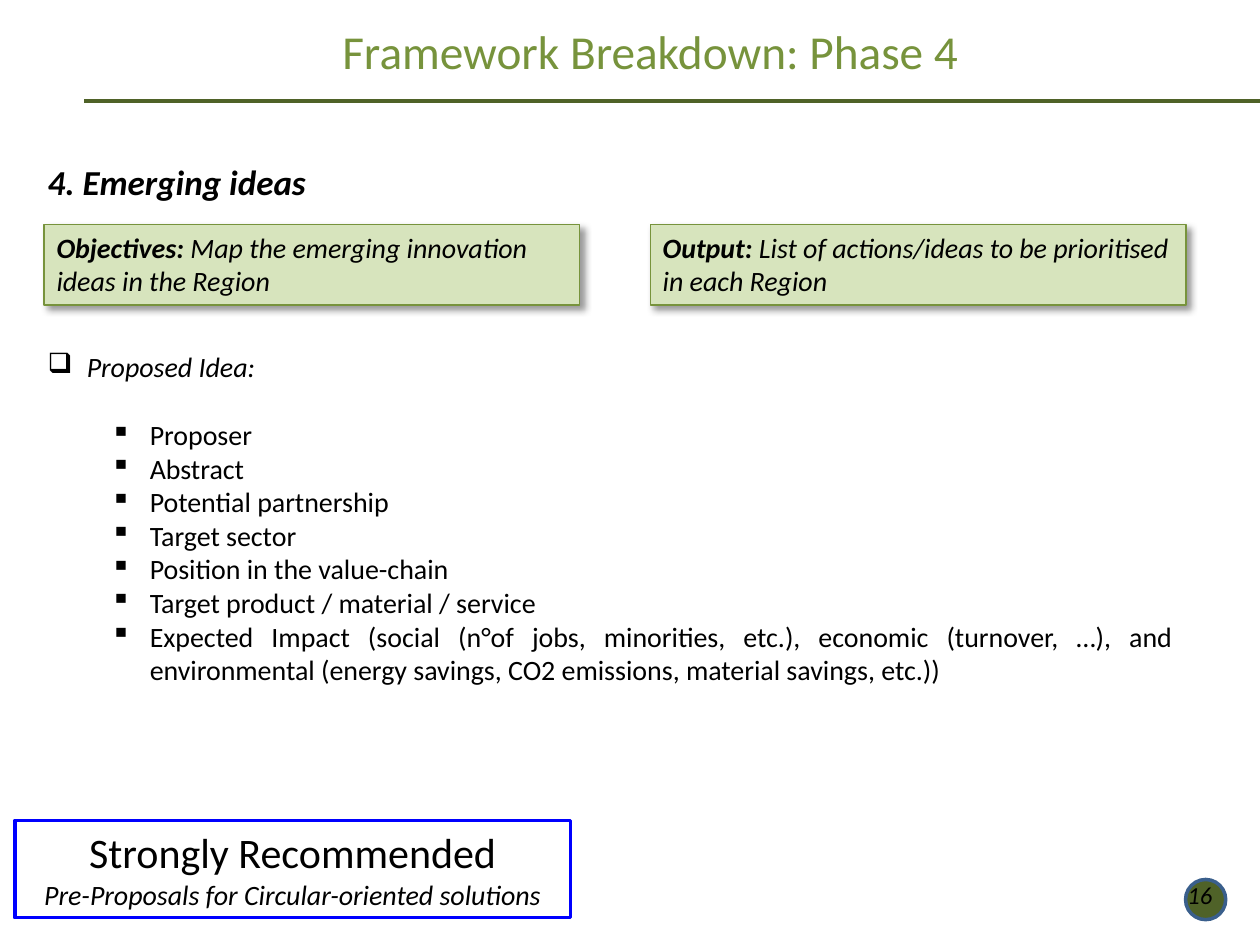
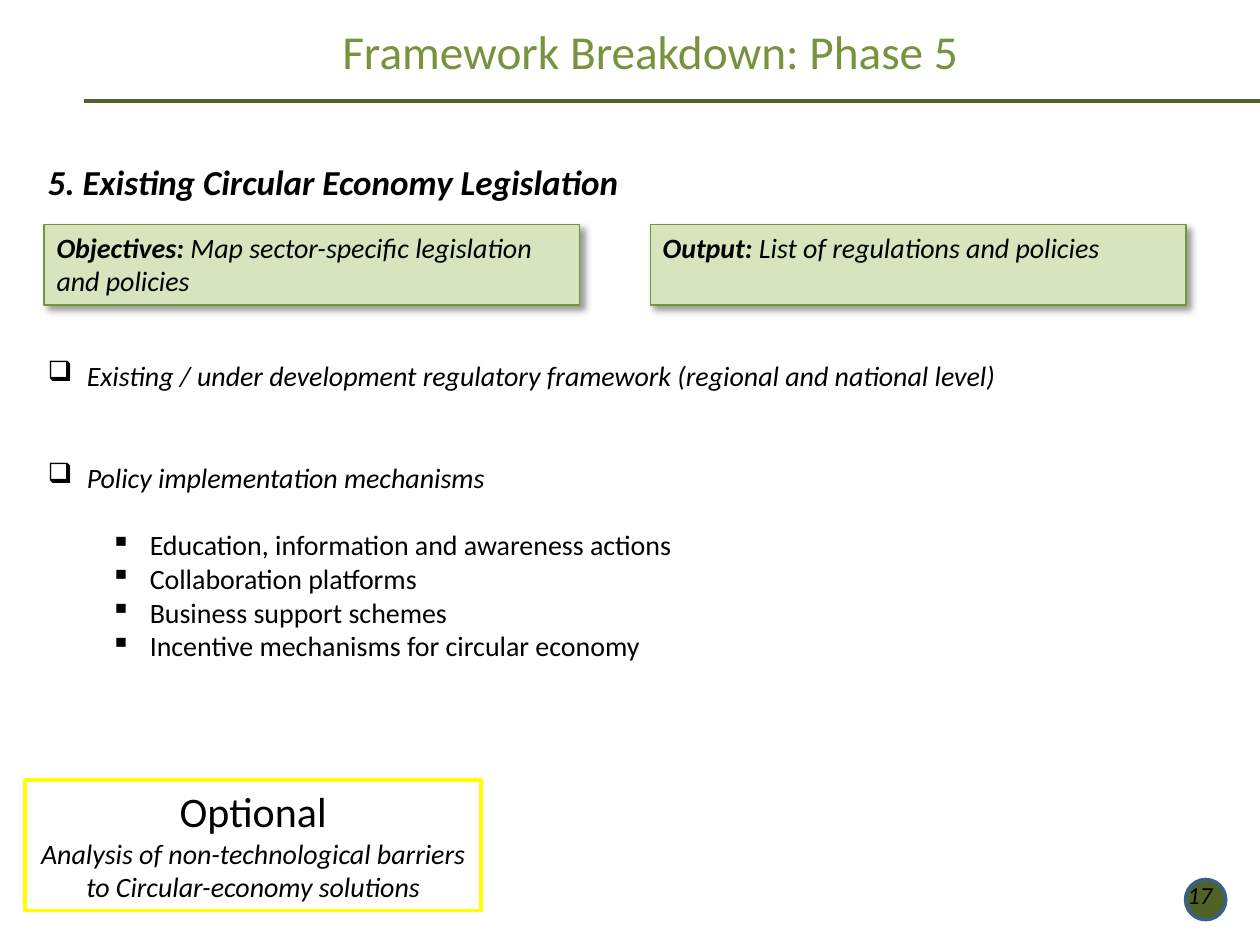
"""Build the two framework breakdown slides for phases 4 and 5."""
from dataclasses import dataclass, field
from typing import Any

from lxml.etree import SubElement
from pptx import Presentation
from pptx.dml.color import RGBColor
from pptx.enum.shapes import MSO_CONNECTOR, MSO_SHAPE as Preset
from pptx.enum.text import MSO_ANCHOR as Anchor, PP_ALIGN as Align
from pptx.oxml.ns import qn
from pptx.util import Cm, Pt

FONT = "Calibri"
BLACK = RGBColor(0x00, 0x00, 0x00)
OLIVE = RGBColor(0x4F, 0x62, 0x28)
GREEN = RGBColor(0x77, 0x93, 0x3C)
PALE_GREEN = RGBColor(0xD7, 0xE4, 0xBD)
BADGE_EDGE = RGBColor(0x3A, 0x5F, 0x8C)
BLUE = RGBColor(0x00, 0x00, 0xFF)
YELLOW = RGBColor(0xFF, 0xFF, 0x00)

BODY_LINE = 19.5
BULLET_HANG = Cm(0.79)
TITLE_ONLY = 5


@dataclass(frozen=True)
class Area:
    left: float
    top: float
    width: float
    height: float

    def lengths(self) -> tuple:
        return Cm(self.left), Cm(self.top), Cm(self.width), Cm(self.height)


@dataclass(frozen=True)
class Span:
    text: str
    size: float = 16
    bold: bool = False
    italic: bool = False
    color: RGBColor = BLACK


@dataclass(frozen=True)
class Para:
    spans: list[Span]
    align: Align = Align.JUSTIFY
    bullet: str = ""
    indent: float = 0
    blank_lines: int = 0


@dataclass(frozen=True)
class Verdict:
    heading: str
    detail: str
    edge: RGBColor
    area: Area


@dataclass(frozen=True)
class Phase:
    number: int
    page: int
    topic: str
    objectives: str
    output: str
    body_area: Area
    verdict: Verdict
    body: list[Para] = field(default_factory=list)


TITLE_AREA = Area(0.1, 0.33, 26.01, 1.7)
HEADING_AREA = Area(0.71, 3.12, 23.6, 1.12)
BADGE_AREA = Area(23.9, 17.73, 0.81, 0.81)
NUMBER_AREA = Area(23.37, 17.53, 1.32, 1.02)
SUMMARY_AREA = Area(0.89, 4.52, 10.8, 1.63)
SUMMARY_STEP = 12.22


def topic_para(text: str, blank_lines: int = 0) -> Para:
    return Para([Span(text, italic=True)], bullet="❑", indent=0.79, blank_lines=blank_lines)


def item_paras(*texts: str) -> list[Para]:
    return [Para([Span(text)], bullet="▪", indent=2.06, blank_lines=int(index == 0))
            for index, text in enumerate(texts)]


PHASES = [
    Phase(
        4, 16, "Emerging ideas",
        "Map the emerging innovation ideas in the Region",
        "List of actions/ideas to be prioritised in each Region",
        Area(0.71, 6.93, 23.19, 9.14),
        Verdict("Strongly Recommended", "Pre-Proposals for Circular-oriented solutions",
                BLUE, Area(0.3, 16.54, 11.2, 1.96)),
        [topic_para("Proposed Idea:"),
         *item_paras(
             "Proposer", "Abstract", "Potential partnership", "Target sector",
             "Position in the value-chain", "Target product / material / service",
             "Expected Impact (social (n°of jobs, minorities, etc.), economic (turnover, …), "
             "and environmental (energy savings, CO2 emissions, material savings, etc.))")],
    ),
    Phase(
        5, 17, "Existing Circular Economy Legislation",
        "Map sector-specific legislation and policies",
        "List of regulations and policies",
        Area(0.71, 7.1, 23.19, 7.1),
        Verdict("Optional",
                "Analysis of non-technological barriers to Circular-economy solutions",
                YELLOW, Area(0.51, 15.72, 9.19, 2.64)),
        [topic_para("Existing / under development regulatory framework "
                    "(regional and national level)"),
         topic_para("Policy implementation mechanisms", 2),
         *item_paras(
             "Education, information and awareness actions", "Collaboration platforms",
             "Business support schemes", "Incentive mechanisms for circular economy")],
    ),
]


def set_all(target: Any, values: dict[str, Any]) -> None:
    for name, value in values.items():
        setattr(target, name, value)


def write_paras(box: Any, paras: list[Para], anchor: Anchor = Anchor.TOP) -> None:
    frame = box.text_frame
    set_all(frame, {"word_wrap": True, "vertical_anchor": anchor})
    for index, para in enumerate(paras):
        line = frame.add_paragraph() if index else frame.paragraphs[0]
        set_all(line, {"alignment": para.align,
                       "space_before": Pt(BODY_LINE * para.blank_lines)})
        if para.bullet:
            properties = line._p.get_or_add_pPr()
            properties.set("marL", str(Cm(para.indent)))
            properties.set("indent", str(-BULLET_HANG))
            SubElement(properties, qn("a:buChar"), char=para.bullet)
        for span in para.spans:
            run = line.add_run()
            run.text = span.text
            set_all(run.font, {"name": FONT, "size": Pt(span.size),
                               "bold": span.bold, "italic": span.italic})
            run.font.color.rgb = span.color


def add_text(page: Any, area: Area, para: Para, anchor: Anchor = Anchor.TOP) -> None:
    write_paras(page.shapes.add_textbox(*area.lengths()), [para], anchor)


def add_panel(page: Any, area: Area, edge: RGBColor, width: float,
              fill: RGBColor | None = None, preset: Preset = Preset.RECTANGLE) -> Any:
    panel = page.shapes.add_shape(preset, *area.lengths())
    panel.shadow.inherit = False
    if fill is None:
        panel.fill.background()
    else:
        panel.fill.solid()
        panel.fill.fore_color.rgb = fill
    panel.line.color.rgb = edge
    panel.line.width = Pt(width)
    return panel


def add_shadow(panel: Any) -> None:
    effects = panel._element.spPr.find(qn("a:effectLst"))
    shadow = SubElement(effects, qn("a:outerShdw"), blurRad=str(Pt(4)), dist=str(Pt(3)),
                        dir=str(45 * 60000), algn="tl", rotWithShape="0")
    color = SubElement(shadow, qn("a:srgbClr"), val=str(BLACK))
    SubElement(color, qn("a:alpha"), val="40000")


def add_frame(page: Any, phase: Phase) -> None:
    add_panel(page, BADGE_AREA, BADGE_EDGE, 2, OLIVE, Preset.OVAL)
    number = Span(str(phase.page), 14, italic=True)
    add_text(page, NUMBER_AREA, Para([number], Align.RIGHT), Anchor.MIDDLE)

    title = page.shapes.title
    set_all(title, dict(zip(("left", "top", "width", "height"), TITLE_AREA.lengths())))
    heading = Span(f"Framework Breakdown: Phase {phase.number}", 27, color=GREEN)
    write_paras(title, [Para([heading], Align.CENTER)])

    rule = page.shapes.add_connector(MSO_CONNECTOR.STRAIGHT, Cm(1.7), Cm(2.03), Cm(25.4), Cm(2.03))
    rule.line.color.rgb = OLIVE
    rule.line.width = Pt(2.25)
    SubElement(rule._element.spPr, qn("a:effectLst"))


def add_summaries(page: Any, phase: Phase) -> None:
    summaries = {"Objectives: ": phase.objectives, "Output: ": phase.output}
    for column, (label, text) in enumerate(summaries.items()):
        area = Area(SUMMARY_AREA.left + column * SUMMARY_STEP, SUMMARY_AREA.top,
                    SUMMARY_AREA.width, SUMMARY_AREA.height)
        panel = add_panel(page, area, GREEN, 0.75, PALE_GREEN)
        add_shadow(panel)
        spans = [Span(label, bold=True, italic=True), Span(text, italic=True)]
        write_paras(panel, [Para(spans, Align.LEFT)])


def add_verdict(page: Any, verdict: Verdict) -> None:
    panel = add_panel(page, verdict.area, verdict.edge, 2)
    write_paras(panel, [Para([Span(verdict.heading, 24)], Align.CENTER),
                        Para([Span(verdict.detail, italic=True)], Align.CENTER)])


def add_phase(deck: Any, phase: Phase) -> None:
    page = deck.slides.add_slide(deck.slide_layouts[TITLE_ONLY])
    add_frame(page, phase)
    heading = Span(f"{phase.number}. {phase.topic}", 20, bold=True, italic=True)
    add_text(page, HEADING_AREA, Para([heading]))
    add_summaries(page, phase)
    write_paras(page.shapes.add_textbox(*phase.body_area.lengths()), phase.body)
    add_verdict(page, phase.verdict)


def main() -> None:
    deck = Presentation()
    set_all(deck, {"slide_width": Cm(25.4), "slide_height": Cm(19.05)})
    for phase in PHASES:
        add_phase(deck, phase)
    deck.save("out.pptx")


if __name__ == "__main__":
    main()
